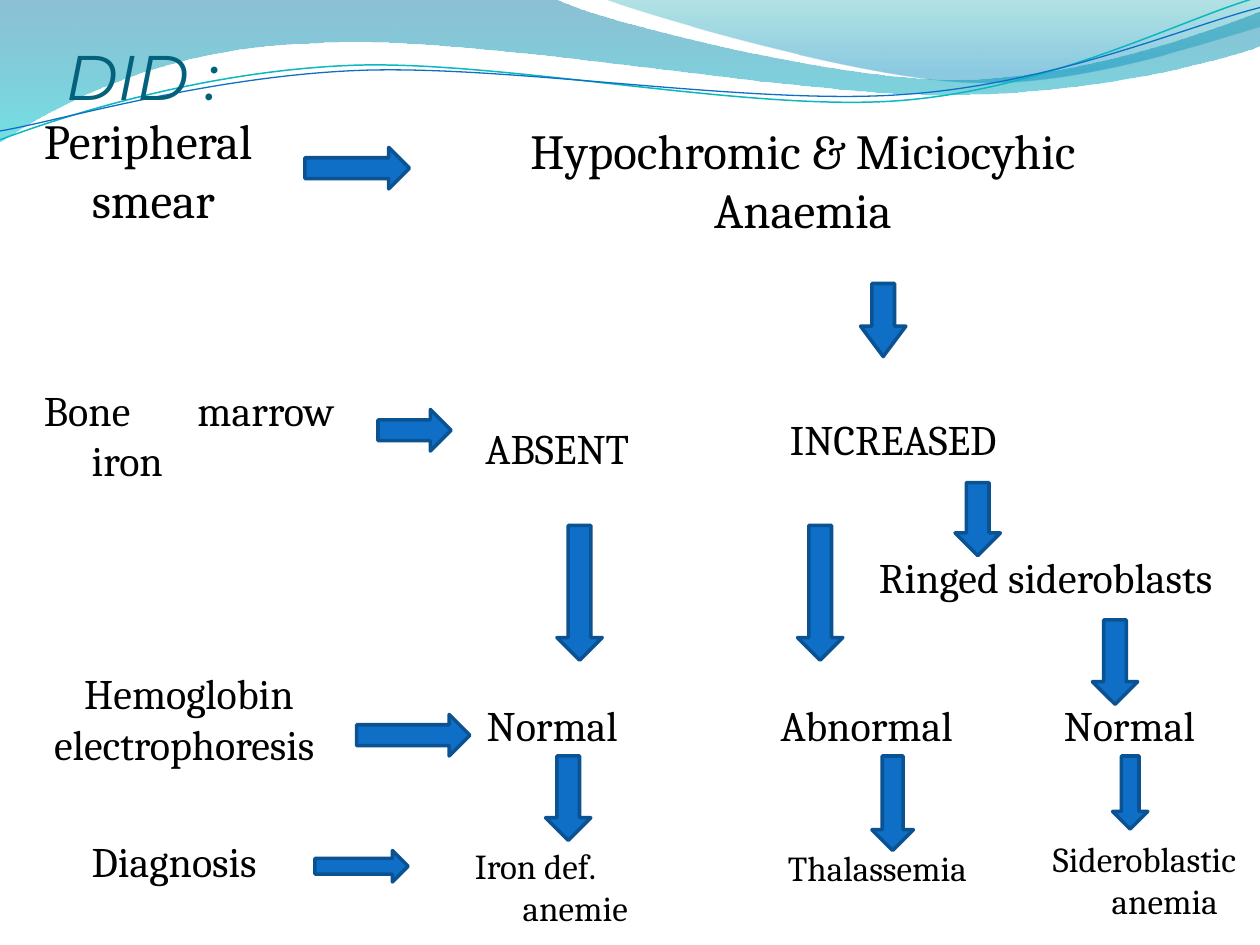
from pptx import Presentation
from pptx.dml.color import RGBColor
from pptx.enum.shapes import MSO_SHAPE
from pptx.enum.text import MSO_ANCHOR, PP_ALIGN
from pptx.oxml.ns import qn
from pptx.util import Inches, Pt
from lxml.etree import SubElement

BLACK = RGBColor(0x00, 0x00, 0x00)
WHITE = RGBColor(0xFF, 0xFF, 0xFF)
BLUE = RGBColor(0x0F, 0x6F, 0xC6)
NAVY = RGBColor(0x0B, 0x52, 0x92)
TEAL = RGBColor(0x04, 0x61, 0x7B)
AQUA = RGBColor(0x0A, 0xB8, 0xBF)
DEEP = RGBColor(0x00, 0x74, 0xA1)
CYAN = RGBColor(0x00, 0xC6, 0xCF)
SEA = RGBColor(0x00, 0xA1, 0xA9)
SKY = RGBColor(0x00, 0x8B, 0xBF)

LEFT, MID, JUST = PP_ALIGN.LEFT, PP_ALIGN.CENTER, PP_ALIGN.JUSTIFY
TOP, BASE = MSO_ANCHOR.TOP, MSO_ANCHOR.BOTTOM
RIGHT, DOWN = MSO_SHAPE.RIGHT_ARROW, MSO_SHAPE.DOWN_ARROW

BANDS = [
    ([(0, 0), (4.4, -0.01),
      (4.76, 0.17, 6.64, 0.63, 7.58, 0.63), (8.53, 0.63, 9.58, 0.26, 10, 0.09),
      (10.01, 0.36),
      (9.83, 0.44, 8.7, 0.76, 7.46, 0.75), (6.22, 0.75, 3.82, 0.28, 2.57, 0.34),
      (1.29, 0.36, 0.46, 0.83, -0.01, 1.13), (0, 0)],
     [(0, DEEP, 45), (1, CYAN, 55)]),
    ([(4.79, -0.01),
      (5.09, 0.11, 6.82, 0.62, 7.69, 0.65), (8.56, 0.69, 9.61, 0.32, 10, 0.21),
      (10, 0), (4.79, -0.01)],
     [(0, SEA, 30), (0.8, SKY, 45)]),
]
CURVES = [
    ([(0, 1.11), (0.48, 0.93, 1.58, 0.57, 2.77, 0.52),
      (3.95, 0.47, 5.93, 0.89, 7.13, 0.8), (8.33, 0.71, 9.38, 0.15, 9.98, -0.02)],
     AQUA, 0.85),
    ([(0, 1.04), (0.47, 0.96, 1.64, 0.61, 2.83, 0.56),
      (4.03, 0.51, 5.97, 0.84, 7.17, 0.75), (8.36, 0.67, 9.41, 0.21, 10, 0.06)],
     BLUE, 0.75),
]
LABELS = [
    ((0.25, 0.83, 2.25, 1.03), "Peripheral smear", 28, LEFT),
    ((0.25, 3, 2.5, 0.91), "Bone marrow iron ", 24, JUST),
    ((0.25, 5.25, 2.5, 0.91), "Hemoglobin\nelectrophoresis ", 24, MID),
    ((0.17, 6.58, 2.5, 0.5), "Diagnosis ", 24, MID),
    ((3.67, 6.65, 1.5, 0.77), "Iron def. anemie", 20, LEFT),
    ((6.08, 6.67, 1.83, 0.43), "Thalassemia ", 20, MID),
    ((8.17, 6.6, 1.83, 0.77), "Sideroblastic anemia ", 20, MID),
]
BOXES = [
    ((3.75, 0.9, 5.33, 1.04), "Hypochromic & Miciocyhic \nAnaemia ", 28),
    ((3.67, 3.23, 1.58, 0.57), "ABSENT ", 24),
    ((6, 3.23, 2.25, 0.5), "INCREASED ", 24),
    ((6.75, 4.33, 3.17, 0.5), "Ringed sideroblasts ", 24),
    ((3.67, 5.5, 1.5, 0.5), "Normal ", 24),
    ((6, 5.5, 1.83, 0.5), "Abnormal ", 24),
    ((8.25, 5.5, 1.5, 0.5), "Normal ", 24),
]
ARROWS = [
    (RIGHT, (2.42, 1.17, 0.83, 0.33)),
    (RIGHT, (3, 3.25, 0.58, 0.33)),
    (RIGHT, (2.83, 5.67, 0.9, 0.33)),
    (RIGHT, (2.5, 6.75, 0.74, 0.25)),
    (DOWN, (6.83, 2.25, 0.36, 0.58), 0.67),
    (DOWN, (7.58, 3.83, 0.36, 0.58)),
    (DOWN, (6.33, 4.17, 0.36, 1.07)),
    (DOWN, (4.42, 4.17, 0.36, 1.07)),
    (DOWN, (8.67, 4.92, 0.36, 0.67)),
    (DOWN, (8.83, 6, 0.28, 0.58)),
    (DOWN, (6.92, 6, 0.33, 0.75)),
    (DOWN, (4.33, 6, 0.36, 0.67)),
]


def place(box):
    return [Inches(v) for v in box]


def style(item, form):
    for key, val in form.items():
        setattr(item, key, val)


def draw(slide, parts, close):
    dots = [(Inches(x), Inches(y)) for part in parts
            for x, y in zip(part[::2], part[1::2])]
    pen = slide.shapes.build_freeform(*dots[0], scale=1.0)
    pen.add_line_segments(dots[1:], close=close)
    shape = pen.convert_to_shape()
    shape.shadow.inherit = False
    lines = iter(list(shape._element.spPr.iter(qn("a:lnTo"))))
    for part in parts[1:]:
        node = next(lines)
        if len(part) == 6:
            node.tag = qn("a:cubicBezTo")
            bend = node.getparent()[node.getparent().index(node)]
            for _ in range(2):
                extra = next(lines)
                bend.append(extra[0])
                extra.getparent().remove(extra)
    return shape


def add_band(slide, parts, stops):
    shape = draw(slide, parts, True)
    shape.line.fill.background()
    shape.fill.gradient()
    shape.fill.gradient_angle = 270
    for stop, (pos, tint, _) in zip(shape.fill.gradient_stops, stops):
        stop.position = pos
        stop.color.rgb = tint
    tints = list(shape._element.spPr.iter(qn("a:srgbClr")))
    for node, (_, _, alpha) in zip(tints, stops):
        SubElement(node, qn("a:alpha")).set("val", str(alpha * 1000))


def add_curve(slide, parts, tint, width):
    shape = draw(slide, parts, False)
    shape.fill.background()
    shape.line.color.rgb = tint
    shape.line.width = Pt(width)


def write(shape, text, size, align, hang=0.38, wrap=True, name="Cambria",
          tint=BLACK, slant=False, anchor=TOP):
    frame = shape.text_frame
    style(frame, {"text": text, "word_wrap": wrap, "vertical_anchor": anchor})
    for para in frame.paragraphs:
        para.alignment = align
        if hang:
            props = para._p.get_or_add_pPr()
            props.set("marL", str(Inches(hang)))
            props.set("indent", str(-Inches(hang)))
        for run in para.runs:
            style(run.font, {"size": Pt(size), "name": name, "italic": slant})
            run.font.color.rgb = tint


def add_label(slide, box, text, size, align, **form):
    label = slide.shapes.add_textbox(*place(box))
    write(label, text, size, align, **form)
    return label


def add_title(slide, box, text):
    title = add_label(slide, box, text, 36, LEFT, hang=0, wrap=False,
                      name="Montserrat", tint=TEAL, slant=True)
    title.text_frame.margin_right = 0


def add_shape(slide, kind, box, edge, width):
    shape = slide.shapes.add_shape(kind, *place(box))
    shape.shadow.inherit = False
    shape.line.color.rgb = edge
    shape.line.width = Pt(width)
    return shape


def add_box(slide, box, text, size):
    shape = add_shape(slide, MSO_SHAPE.RECTANGLE, box, WHITE, 2.25)
    shape.fill.background()
    write(shape, text, size, MID, anchor=BASE)


def add_arrow(slide, kind, box, head=0.5):
    shape = add_shape(slide, kind, box, NAVY, 2)
    shape.fill.solid()
    shape.fill.fore_color.rgb = BLUE
    shape.adjustments[1] = head


def main():
    deck = Presentation()
    style(deck, {"slide_width": Inches(10), "slide_height": Inches(7.5)})
    slide = deck.slides.add_slide(deck.slide_layouts[6])
    for band in BANDS:
        add_band(slide, *band)
    for curve in CURVES:
        add_curve(slide, *curve)
    for box in BOXES:
        add_box(slide, *box)
    for label in LABELS:
        add_label(slide, *label)
    add_title(slide, (0.42, 0.25, 1.45, 0.53), "DID :")
    for arrow in ARROWS:
        add_arrow(slide, *arrow)
    deck.save("out.pptx")


if __name__ == "__main__":
    main()
